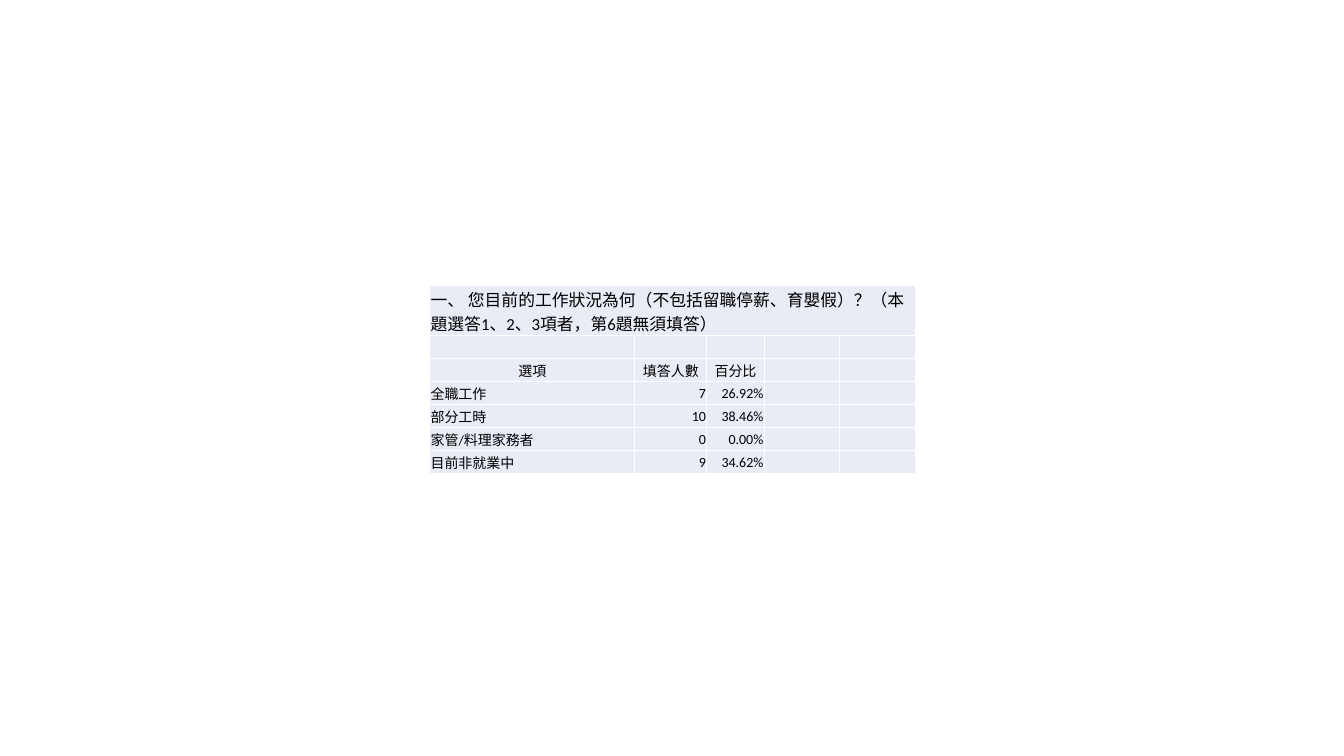
from lxml.etree import SubElement
from pptx import Presentation
from pptx.dml.color import RGBColor
from pptx.enum.text import MSO_ANCHOR, PP_ALIGN
from pptx.oxml.ns import qn
from pptx.util import Pt

COLORS = {"text": "000000", "cell": "E9EBF5", "border": "FFFFFF"}
QUESTION = "一、 您目前的工作狀況為何（不包括留職停薪、育嬰假）？（本題選答1、2、3項者，第6題無須填答）"
HEADER = ["選項", "填答人數", "百分比"]
ANSWERS = [
    ["全職工作", "7", "26.92%"],
    ["部分工時", "10", "38.46%"],
    ["家管/料理家務者", "0", "0.00%"],
    ["目前非就業中", "9", "34.62%"],
]
COLUMN_WIDTHS = [146.6, 51.4, 41, 54, 54]
ROW_HEIGHTS = [33.1] + [16.5] * 6


def write_text(tf, text, size=10, font="Calibri", color="text", align=PP_ALIGN.LEFT):
    p = tf.paragraphs[0]
    p.alignment = align
    if not text:
        SubElement(p._p, qn("a:endParaRPr"), sz=str(size * 100))
        return
    r = p.add_run()
    r.text = text
    r.font.size = Pt(size)
    r.font.name = font
    r.font.color.rgb = RGBColor.from_string(COLORS[color])


class SurveySlide:
    def __init__(self, prs):
        self.s = prs.slides.add_slide(prs.slide_layouts[6])
        self.border_width = 1

    def table(self, left, top, widths, heights):
        frame = self.s.shapes.add_table(
            len(heights), len(widths), Pt(left), Pt(top), Pt(sum(widths)), Pt(sum(heights))
        )
        table = frame.table
        table.first_row = False
        table.horz_banding = False
        for column, width in zip(table.columns, widths):
            column.width = Pt(width)
        for row, height in zip(table.rows, heights):
            row.height = Pt(height)
        return table

    def borders(self, cell):
        tcPr = cell._tc.get_or_add_tcPr()
        for side in ("lnL", "lnR", "lnT", "lnB"):
            ln = SubElement(tcPr, qn(f"a:{side}"), w=str(Pt(self.border_width)))
            fill = SubElement(ln, qn("a:solidFill"))
            SubElement(fill, qn("a:srgbClr"), val=COLORS["border"])

    def cell(self, cell, text, **text_format):
        cell.margin_left = cell.margin_right = cell.margin_top = Pt(0.7)
        cell.margin_bottom = Pt(0)
        cell.vertical_anchor = MSO_ANCHOR.MIDDLE
        self.borders(cell)
        cell.fill.solid()
        cell.fill.fore_color.rgb = RGBColor.from_string(COLORS["cell"])
        write_text(cell.text_frame, text, **text_format)


def main():
    prs = Presentation()
    prs.slide_width, prs.slide_height = Pt(960), Pt(540)
    slide = SurveySlide(prs)
    table = slide.table(306.9, 204, COLUMN_WIDTHS, ROW_HEIGHTS)
    table.cell(0, 0).merge(table.cell(0, len(COLUMN_WIDTHS) - 1))

    rows = [[QUESTION], [], HEADER] + ANSWERS
    for i, texts in enumerate(rows):
        padded = texts + [""] * (len(COLUMN_WIDTHS) - len(texts))
        for j, text in enumerate(padded):
            if texts is HEADER:
                align = PP_ALIGN.CENTER
            else:
                align = PP_ALIGN.RIGHT if j else PP_ALIGN.LEFT
            slide.cell(table.cell(i, j), text, size=10 if i else 12, align=align)

    prs.save("out.pptx")


if __name__ == "__main__":
    main()
